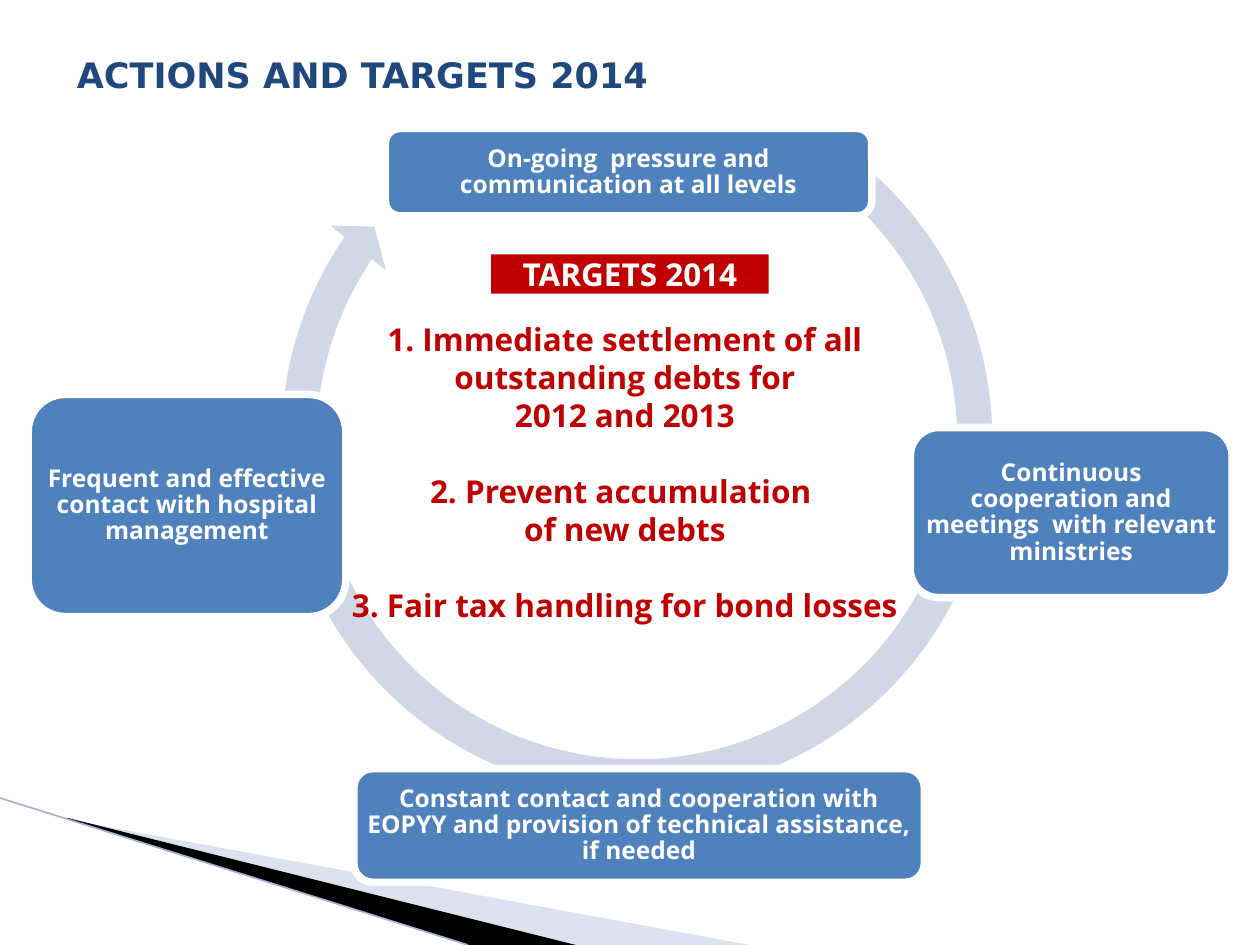
from dataclasses import dataclass

import pptx
import pptx.dml.color
import pptx.enum.shapes
import pptx.enum.text
import pptx.oxml
import pptx.oxml.ns
import pptx.util
from lxml import etree

Pt = pptx.util.Pt
Shape = pptx.enum.shapes.MSO_SHAPE
Align = pptx.enum.text.PP_ALIGN
Anchor = pptx.enum.text.MSO_ANCHOR

COLORS = {
    "box": "4F81BD",
    "ring": "D0D8E8",
    "title": "1F497D",
    "red": "C00000",
    "white": "FFFFFF",
    "black": "000000",
    "wedge": "A7B9DB",
    "edge": "9EB3D6",
}


@dataclass
class Box:
    text: str
    left: float
    top: float
    width: float
    height: float


@dataclass
class Wedge:
    points: list[tuple[float, float]]
    color: str
    alpha: int = 100


WEDGES = [
    Wedge([(39.6, 468.5), (428.4, 540), (328.3, 540)], "wedge", 40),
    Wedge([(38.2, 467.3), (329, 540), (267.8, 540), (38.9, 468)], "black"),
]

STEPS = [
    Box("On-going  pressure and communication at all levels",
        220.2, 73.4, 278, 50),
    Box("Continuous cooperation and meetings  with relevant ministries",
        520.2, 244.3, 183.9, 97.2),
    Box("Constant contact and cooperation with EOPYY and provision of "
        "technical assistance, if needed", 202.2, 439.2, 326, 65),
    Box("Frequent and effective contact with hospital management",
        16.1, 225.4, 181.5, 127),
]

GOALS = [
    ("1. Immediate settlement of all outstanding debts for", False),
    ("2012 and 2013", False),
    ("2. Prevent accumulation ", True),
    ("of new debts", False),
    ("3. Fair tax handling for bond losses", True),
]
PITCH = 21.7  # line height of the goals


def rgb(name: str):
    return pptx.dml.color.RGBColor.from_string(COLORS[name])


def write(para, text: str, *, size: float, color: str, font="Open Sans",
          align=Align.CENTER, line=None, before=0) -> None:
    para.text = text
    para.alignment = align
    para.space_before = Pt(before)
    if line:
        para.line_spacing = Pt(line)
    para.font.name = font
    para.font.size = Pt(size)
    para.font.bold = True
    para.font.color.rgb = rgb(color)


def paint(shape, fill: str, line=None, width=1.0) -> None:
    shape.shadow.inherit = False
    shape.fill.solid()
    shape.fill.fore_color.rgb = rgb(fill)
    if line:
        shape.line.color.rgb = rgb(line)
        shape.line.width = Pt(width)
    else:
        shape.line.fill.background()


def place(shapes, kind, left: float, top: float, width: float, height: float):
    return shapes.add_shape(kind, Pt(left), Pt(top), Pt(width), Pt(height))


def draw_wedge(shapes, wedge: Wedge) -> None:
    points = [(Pt(x), Pt(y)) for x, y in wedge.points]
    form = shapes.build_freeform(*points[0])
    form.add_line_segments(points[1:], close=True)
    shape = form.convert_to_shape()
    paint(shape, wedge.color)
    if wedge.alpha < 100:
        tone = shape.fill._xPr.find(".//" + pptx.oxml.ns.qn("a:srgbClr"))
        alpha = etree.SubElement(tone, pptx.oxml.ns.qn("a:alpha"))
        alpha.set("val", str(wedge.alpha * 1000))


def draw_edge(shapes) -> None:
    """Draw the thin line along the corner wedges."""
    edge = shapes.add_connector(pptx.enum.shapes.MSO_CONNECTOR.STRAIGHT,
                                Pt(0), Pt(456), Pt(267.5), Pt(540))
    edge.line.color.rgb = rgb("edge")
    edge.line.width = Pt(0.95)
    etree.SubElement(edge._element.spPr, pptx.oxml.ns.qn("a:effectLst"))


def draw_ring(shapes) -> None:
    ring = place(shapes, Shape.CIRCULAR_ARROW, 150.5, 37.4, 427, 427)
    for i, value in enumerate((0.047, 2.729, 128.647, 180.082, 0.048)):
        ring.adjustments[i] = value
    paint(ring, "ring")


def draw_step(shapes, step: Box) -> None:
    shape = place(shapes, Shape.ROUNDED_RECTANGLE,
                  step.left, step.top, step.width, step.height)
    paint(shape, "box", "white", 4.33)
    frame = shape.text_frame
    frame.word_wrap = True
    frame.vertical_anchor = Anchor.MIDDLE
    frame.margin_left = frame.margin_right = Pt(4.2)
    frame.margin_top = frame.margin_bottom = Pt(4.2)
    write(frame.paragraphs[0], step.text, size=14, color="white", line=15)


def draw_goals(shapes) -> None:
    box = shapes.add_textbox(Pt(184.3), Pt(179.3), Pt(345.6), Pt(181.4))
    frame = box.text_frame
    frame.word_wrap = True
    for i, (text, gap) in enumerate(GOALS):
        para = frame.add_paragraph() if i else frame.paragraphs[0]
        write(para, text, size=18, color="red", line=PITCH,
              before=PITCH if gap else 0)


def draw_label(shapes) -> None:
    label = place(shapes, Shape.RECTANGLE, 280.6, 145.4, 158.7, 22.4)
    paint(label, "red")
    label.text_frame.vertical_anchor = Anchor.MIDDLE
    write(label.text_frame.paragraphs[0], "TARGETS 2014",
          size=18, color="white")


def set_title(title) -> None:
    title.left, title.top = Pt(36.7), Pt(15.1)
    title.width, title.height = Pt(648), Pt(55.4)
    title.text_frame.vertical_anchor = Anchor.MIDDLE
    write(title.text_frame.paragraphs[0], "ACTIONS AND TARGETS 2014",
          size=20, color="title", font="DejaVu Sans", align=Align.LEFT)


def main() -> None:
    deck = pptx.Presentation()
    deck.slide_width, deck.slide_height = Pt(720), Pt(540)
    slide = deck.slides.add_slide(deck.slide_layouts[5])
    shapes = slide.shapes
    set_title(shapes.title)
    for wedge in WEDGES:
        draw_wedge(shapes, wedge)
    draw_edge(shapes)
    draw_ring(shapes)
    for step in STEPS:
        draw_step(shapes, step)
    draw_goals(shapes)
    draw_label(shapes)
    deck.save("out.pptx")


if __name__ == "__main__":
    main()
